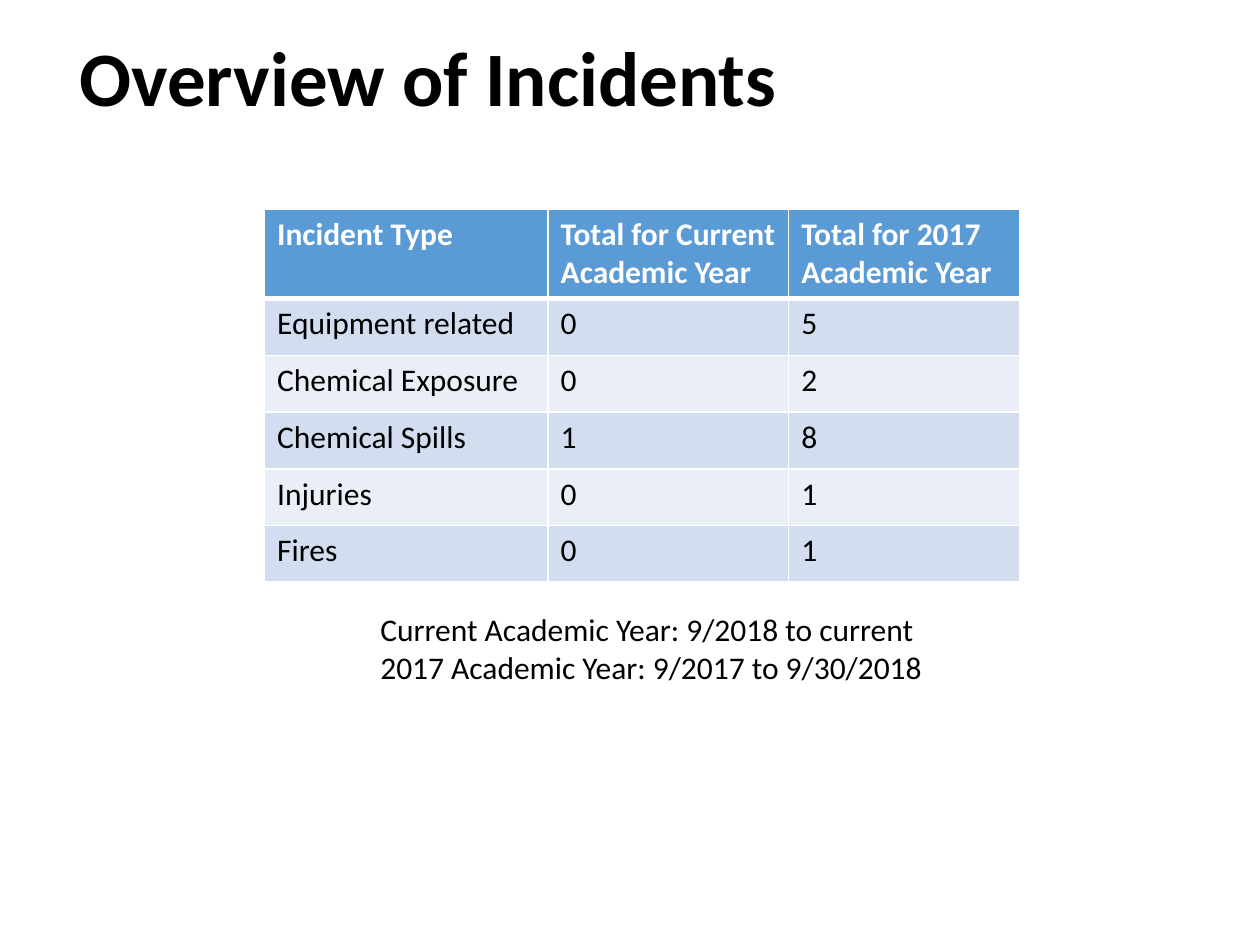
from dataclasses import dataclass

from lxml import etree
from pptx import Presentation
from pptx import util as u
from pptx.dml.color import RGBColor
from pptx.enum import text
from pptx.oxml.ns import qn


@dataclass(frozen=True)
class Theme:
    font: str = "Calibri"
    ink: str = "000000"
    paper: str = "FFFFFF"
    header: str = "5B9BD5"
    bands: tuple[str, str] = ("D2DEEF", "EAEFF7")
    title_size: int = 44
    body_size: int = 18
    rule: int = 1
    header_rule: int = 3


@dataclass(frozen=True)
class Incident:
    kind: str
    current: int
    previous: int


THEME = Theme()
HEADINGS = ("Incident Type", "Total for Current Academic Year", "Total for 2017 Academic Year")
INCIDENTS = (
    Incident("Equipment related", 0, 5),
    Incident("Chemical Exposure", 0, 2),
    Incident("Chemical Spills", 1, 8),
    Incident("Injuries", 0, 1),
    Incident("Fires", 0, 1),
)
PERIODS = ("Current Academic Year: 9/2018 to current", "2017 Academic Year: 9/2017 to 9/30/2018")
COLUMN_WIDTHS = (2.25, 1.91, 1.83)
HEADER_HEIGHT, ROW_HEIGHT = 0.69, 0.45


def write(para, words: str, *, size: int = THEME.body_size, color: str = THEME.ink,
          bold: bool = False) -> None:
    para.alignment = text.PP_ALIGN.LEFT
    span = para.add_run()
    span.text = words
    span.font.name = THEME.font
    span.font.size = u.Pt(size)
    span.font.bold = bold
    span.font.color.rgb = RGBColor.from_string(color)


def add_border(cell, side: str, width: int) -> None:
    line = etree.SubElement(cell._tc.get_or_add_tcPr(), qn(f"a:ln{side}"), w=str(u.Pt(width)))
    fill = etree.SubElement(line, qn("a:solidFill"))
    etree.SubElement(fill, qn("a:srgbClr"), val=THEME.paper)


def fill_row(table, index: int, values: tuple) -> None:
    is_header = index == 0
    fill = THEME.header if is_header else THEME.bands[(index - 1) % 2]
    table.rows[index].height = u.Inches(HEADER_HEIGHT if is_header else ROW_HEIGHT)
    # The heavier rule is shared by the header and the first body row
    top = THEME.header_rule if index == 1 else THEME.rule
    bottom = THEME.header_rule if is_header else THEME.rule
    for column, value in enumerate(values):
        cell = table.cell(index, column)
        for side, width in (("L", THEME.rule), ("R", THEME.rule), ("T", top), ("B", bottom)):
            add_border(cell, side, width)
        cell.fill.solid()
        cell.fill.fore_color.rgb = RGBColor.from_string(fill)
        write(cell.text_frame.paragraphs[0], str(value),
              color=THEME.paper if is_header else THEME.ink, bold=is_header)


def add_title(page) -> None:
    title = page.shapes.title
    title.left, title.top = u.Inches(0.53), u.Inches(0.15)
    title.width, title.height = u.Inches(8.62), u.Inches(1)
    title.text_frame.vertical_anchor = text.MSO_ANCHOR.MIDDLE
    para = title.text_frame.paragraphs[0]
    para.line_spacing = 0.9
    write(para, "Overview of Incidents", size=THEME.title_size, bold=True)


def add_incident_table(page) -> None:
    height = HEADER_HEIGHT + ROW_HEIGHT * len(INCIDENTS)
    table = page.shapes.add_table(
        len(INCIDENTS) + 1, len(HEADINGS), u.Inches(2.1), u.Inches(1.66),
        u.Inches(sum(COLUMN_WIDTHS)), u.Inches(height)).table
    for column, width in zip(table.columns, COLUMN_WIDTHS):
        column.width = u.Inches(width)
    fill_row(table, 0, HEADINGS)
    for index, incident in enumerate(INCIDENTS, start=1):
        fill_row(table, index, (incident.kind, incident.current, incident.previous))


def add_period_note(page) -> None:
    box = page.shapes.add_textbox(u.Inches(2.92), u.Inches(4.79), u.Inches(4.55), u.Inches(1.01))
    frame = box.text_frame
    frame.word_wrap = False
    frame.auto_size = text.MSO_AUTO_SIZE.SHAPE_TO_FIT_TEXT
    for index, period in enumerate(PERIODS):
        para = frame.add_paragraph() if index else frame.paragraphs[0]
        write(para, period)


def main() -> None:
    deck = Presentation()
    deck.slide_width, deck.slide_height = u.Inches(10), u.Inches(7.5)
    page = deck.slides.add_slide(deck.slide_layouts[5])  # title only
    add_title(page)
    add_incident_table(page)
    add_period_note(page)
    deck.save("out.pptx")


if __name__ == "__main__":
    main()
